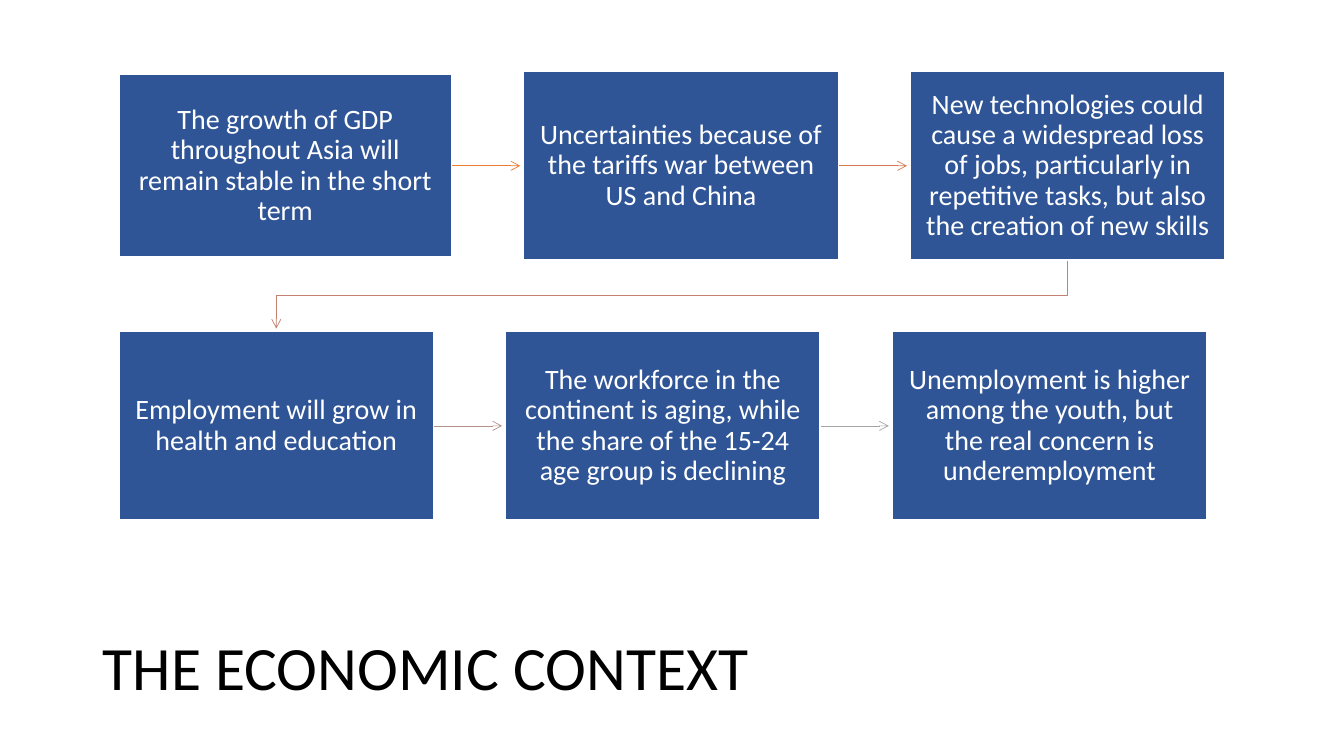
from dataclasses import dataclass

from lxml import etree
from pptx import Presentation
from pptx.dml.color import RGBColor
from pptx.enum.shapes import MSO_CONNECTOR, MSO_SHAPE
from pptx.enum.text import MSO_ANCHOR, MSO_AUTO_SIZE, PP_ALIGN
from pptx.oxml.ns import qn
from pptx.util import Inches, Pt

RECT = MSO_SHAPE.RECTANGLE
STRAIGHT = MSO_CONNECTOR.STRAIGHT
MIDDLE = MSO_ANCHOR.MIDDLE
NO_FIT = MSO_AUTO_SIZE.NONE
LEFT, CENTER = PP_ALIGN.LEFT, PP_ALIGN.CENTER


@dataclass(frozen=True)
class Theme:
    font: str = "Calibri"
    title_size: float = 44
    card_size: float = 20
    card_spacing: float = 7
    line_spacing: float = 0.9
    card_line: float = 1
    arrow_line: float = 0.5
    ink: str = "000000"
    paper: str = "FFFFFF"
    card: str = "2F5597"


@dataclass(frozen=True)
class Grid:
    """Inches: cards run from the left margin, a gap apart, centred on row middles."""
    left: float = 1.18
    gap: float = 0.715
    first_middle: float = 1.645
    row_pitch: float = 2.58
    card_width: float = 3.12
    card_height: float = 1.87
    arrow: float = 0.68
    clearance: float = 0.03

    def middle(self, row: int) -> float:
        return self.first_middle + row * self.row_pitch


@dataclass(frozen=True)
class Card:
    text: str
    arrow_color: str = ""
    width: float = Grid.card_width
    height: float = Grid.card_height


THEME = Theme()
GRID = Grid()
TITLE = "THE ECONOMIC CONTEXT"
RETURN_COLOR = "C48170"
ROWS = [
    [
        Card("The growth of GDP throughout Asia will remain stable in the short term",
             "ED7D31", width=3.3, height=1.81),
        Card("Uncertainties because of the tariffs war between US and China", "D87A51"),
        Card("New technologies could cause a widespread loss of jobs, particularly in "
             "repetitive tasks, but also the creation of new skills"),
    ],
    [
        Card("Employment will grow in health and education", "B4908B"),
        Card("The workforce in the continent is aging, while the share of the 15-24 "
             "age group is declining", "A5A5A5"),
        Card("Unemployment is higher among the youth, but the real concern is "
             "underemployment"),
    ],
]


def rgb(color: str) -> RGBColor:
    return RGBColor.from_string(color)


def style_text(tf, text: str, size: float, color: str, align) -> None:
    tf.text = text
    tf.word_wrap = True
    tf.auto_size = NO_FIT
    tf.vertical_anchor = MIDDLE
    p = tf.paragraphs[0]
    p.alignment = align
    p.line_spacing = THEME.line_spacing
    p.font.name = THEME.font
    p.font.size = Pt(size)
    p.font.color.rgb = rgb(color)


def style_arrow(sp, color: str) -> None:
    """Give a connector or open outline a thin line, an arrowhead and no shadow."""
    sp.line.color.rgb = rgb(color)
    sp.line.width = Pt(THEME.arrow_line)
    etree.SubElement(sp.line._get_or_add_ln(), qn("a:tailEnd"), type="arrow")
    etree.SubElement(sp._element.spPr, qn("a:effectLst"))


def add_title(slide) -> None:
    title = slide.shapes.title
    title.left, title.top = Inches(0.92), Inches(6.05)
    title.width, title.height = Inches(8.44), Inches(1.2)
    style_text(title.text_frame, TITLE, THEME.title_size, THEME.ink, LEFT)


def add_card(slide, card: Card, left: float, middle: float) -> None:
    sp = slide.shapes.add_shape(RECT, Inches(left), Inches(middle - card.height / 2),
                                Inches(card.width), Inches(card.height))
    sp.shadow.inherit = False
    sp.fill.solid()
    sp.fill.fore_color.rgb = rgb(THEME.card)
    sp.line.color.rgb = rgb(THEME.paper)
    sp.line.width = Pt(THEME.card_line)
    tf = sp.text_frame
    tf.margin_left = tf.margin_right = Inches(0.15)
    tf.margin_top = tf.margin_bottom = Inches(0.16)
    style_text(tf, card.text, THEME.card_size, THEME.paper, CENTER)
    tf.paragraphs[0].space_after = Pt(THEME.card_spacing)


def add_row(slide, cards: list[Card], middle: float) -> None:
    left = GRID.left
    for card in cards:
        right = left + card.width
        if card.arrow_color:
            arrow = slide.shapes.add_connector(
                STRAIGHT, Inches(right), Inches(middle),
                Inches(right + GRID.arrow), Inches(middle))
            style_arrow(arrow, card.arrow_color)
        add_card(slide, card, left, middle)
        left = right + GRID.gap


def add_return_arrow(slide) -> None:
    """Lead from under the last card of the first row to the start of the second."""
    upper, lower = ROWS
    start_x = (GRID.left + sum(card.width for card in upper)
               + GRID.gap * (len(upper) - 1) - upper[-1].width / 2)
    end_x = GRID.left + lower[0].width / 2
    start_y = GRID.middle(0) + upper[-1].height / 2
    card_top = GRID.middle(1) - lower[0].height / 2
    turn_y = (start_y + card_top) / 2
    builder = slide.shapes.build_freeform(Inches(start_x), Inches(start_y))
    corners = [(start_x, turn_y), (end_x, turn_y), (end_x, card_top - GRID.clearance)]
    builder.add_line_segments([(Inches(x), Inches(y)) for x, y in corners], close=False)
    sp = builder.convert_to_shape()
    sp.fill.background()
    style_arrow(sp, RETURN_COLOR)


def main() -> None:
    prs = Presentation()
    prs.slide_width, prs.slide_height = Inches(13.33), Inches(7.5)
    slide = prs.slides.add_slide(prs.slide_layouts.get_by_name("Title Only"))
    add_title(slide)
    add_return_arrow(slide)
    for row, cards in enumerate(ROWS):
        add_row(slide, cards, GRID.middle(row))
    prs.save("out.pptx")


if __name__ == "__main__":
    main()
